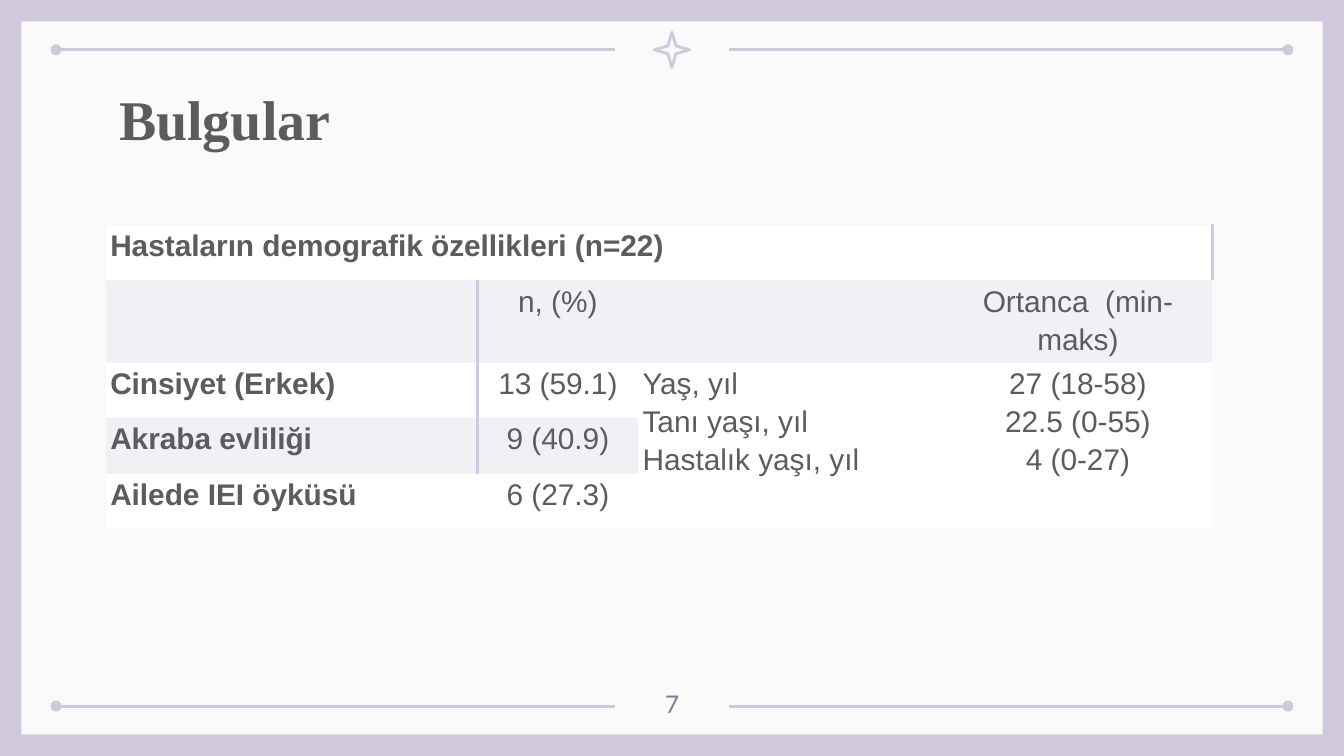
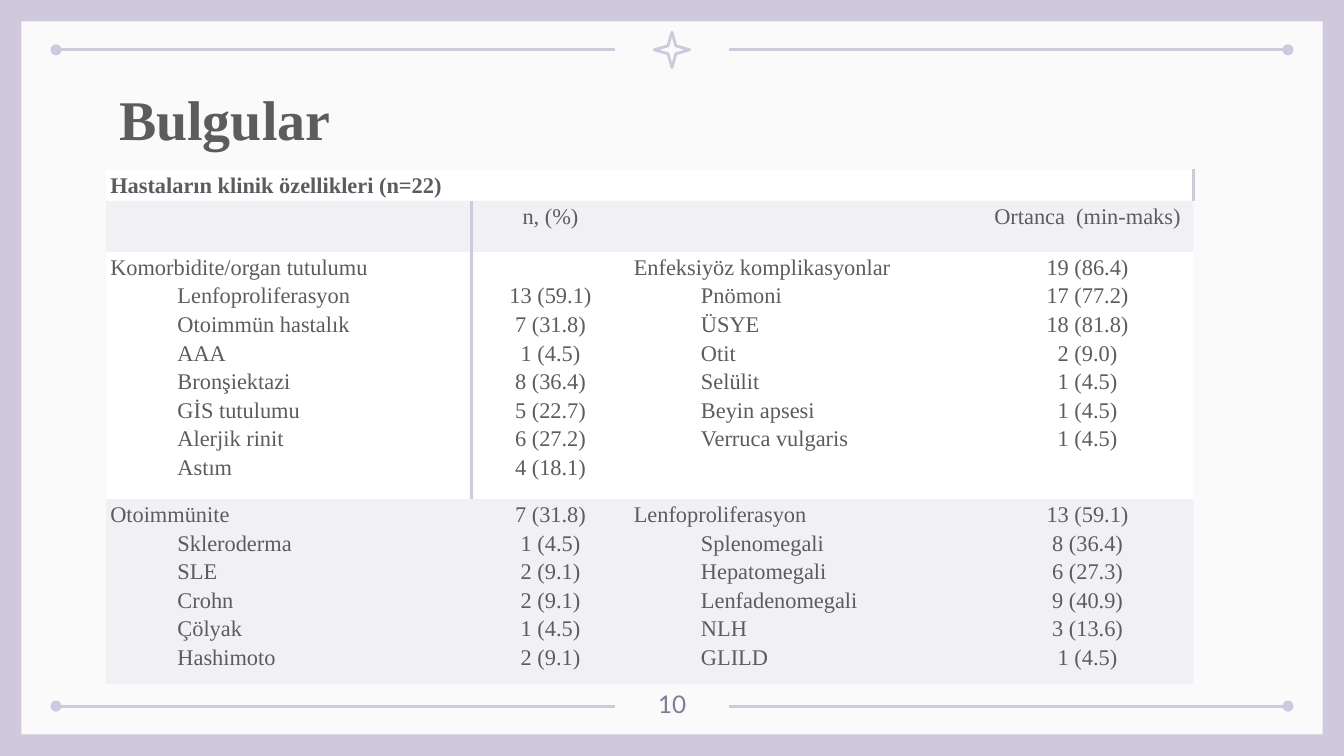
from dataclasses import dataclass

from lxml import etree
from pptx import Presentation
from pptx.dml.color import RGBColor
from pptx.enum import shapes, text
from pptx.oxml import ns
from pptx.util import Pt


@dataclass(frozen=True)
class Theme:
    """Colours, fonts and type sizes shared by the slides."""
    lilac: str = "D0C9DD"
    panel: str = "FAFAFA"
    edge: str = "F9F9F9"
    white: str = "FFFFFF"
    ink: str = "5C5C5F"
    number: str = "85789C"
    serif: str = "Times New Roman"
    sans: str = "Arial"
    number_font: str = "Lato"
    title_size: float = 30
    number_size: float = 13
    rule: float = 1.5
    divider: float = 2
    hairline: float = 0.75
    band_alpha: int = 20000


THEME = Theme()
WIDTH, HEIGHT = 720, 405
NO_GRID_STYLE = "{2D5ABB26-0587-4C30-8999-92F81FD0307C}"

DEMOGRAPHICS = [
    [["Hastaların demografik özellikleri (n=22)"]],
    [[], ["n, (%)"], [], ["Ortanca  (min-maks)"]],
    [["Cinsiyet (Erkek)"], ["13 (59.1)"],
     ["Yaş, yıl", "Tanı yaşı, yıl", "Hastalık yaşı, yıl"],
     ["27 (18-58)", "22.5 (0-55)", "4 (0-27)"]],
    [["Akraba evliliği"], ["9 (40.9)"]],
    [["Ailede IEI öyküsü"], ["6 (27.3)"]],
]

CLINICAL = [
    [["Hastaların klinik özellikleri (n=22)"]],
    [[], ["n, (%)"], [], ["Ortanca  (min-maks)"]],
    [["Komorbidite/organ tutulumu", "Lenfoproliferasyon", "Otoimmün hastalık", "AAA",
      "Bronşiektazi", "GİS tutulumu", "Alerjik rinit", "Astım"],
     ["13 (59.1)", "7 (31.8)", "1 (4.5)", "8 (36.4)", "5 (22.7)", "6 (27.2)", "4 (18.1)"],
     ["Enfeksiyöz komplikasyonlar", "Pnömoni", "ÜSYE", "Otit", "Selülit",
      "Beyin apsesi", "Verruca vulgaris"],
     ["19 (86.4)", "17 (77.2)", "18 (81.8)", "2 (9.0)", "1 (4.5)", "1 (4.5)", "1 (4.5)"]],
    [["Otoimmünite", "Skleroderma", "SLE", "Crohn", "Çölyak", "Hashimoto"],
     ["7 (31.8)", "1 (4.5)", "2 (9.1)", "2 (9.1)", "1 (4.5)", "2 (9.1)"],
     ["Lenfoproliferasyon", "Splenomegali", "Hepatomegali", "Lenfadenomegali", "NLH", "GLILD"],
     ["13 (59.1)", "8 (36.4)", "6 (27.3)", "9 (40.9)", "3 (13.6)", "1 (4.5)"]],
]


def points(*values):
    """Convert numbers to point lengths."""
    return [Pt(value) for value in values]


def color(value):
    """Turn a hex string into a colour."""
    return RGBColor.from_string(value)


def style_runs(paragraph, font, size, ink, bold=False):
    """Format every run of a paragraph."""
    for run in paragraph.runs:
        run.font.name = font
        run.font.size = Pt(size)
        run.font.bold = bold
        run.font.color.rgb = color(ink)


def add_label(slide, box, words, font, size, ink, bold=False, centred=False, top=7.2):
    """Add one line of text in a box."""
    frame = slide.shapes.add_textbox(*points(*box)).text_frame
    frame.word_wrap = True
    frame.margin_left = frame.margin_right = frame.margin_bottom = Pt(7.2)
    frame.margin_top = Pt(top)
    frame.text = words
    paragraph = frame.paragraphs[0]
    paragraph.alignment = text.PP_ALIGN.CENTER if centred else text.PP_ALIGN.LEFT
    style_runs(paragraph, font, size, ink, bold)


def add_rule(slide, start, end, y, dot):
    """Draw a horizontal rule with a dot at its outer end."""
    rule = slide.shapes.add_connector(
        shapes.MSO_CONNECTOR.STRAIGHT, *points(start, y, end, y))
    rule.line.color.rgb = color(THEME.lilac)
    rule.line.width = Pt(THEME.rule)
    etree.SubElement(rule.line._get_or_add_ln(), ns.qn(f"a:{dot}"), type="oval")
    etree.SubElement(rule._element.spPr, ns.qn("a:effectLst"))


def add_frame(slide, box):
    """Draw the panel, the rules and the star inside the given box."""
    left, top, width, height = box
    slide.background.fill.solid()
    slide.background.fill.fore_color.rgb = color(THEME.lilac)
    panel = slide.shapes.add_shape(shapes.MSO_SHAPE.RECTANGLE, *points(*box))
    panel.shadow.inherit = False
    panel.fill.solid()
    panel.fill.fore_color.rgb = color(THEME.panel)
    panel.line.fill.background()
    margin, gap, inset = 18.5, 30.5, 15.2
    middle = left + width / 2
    for y in (top + inset, top + height - inset):
        add_rule(slide, left + margin, middle - gap, y, "headEnd")
        add_rule(slide, middle + gap, left + width - margin, y, "tailEnd")
    size = 19
    star = slide.shapes.add_shape(
        shapes.MSO_SHAPE.STAR_4_POINT,
        *points(middle - size / 2, top + inset - size / 2, size, size))
    star.adjustments[0] = 0.157
    star.shadow.inherit = False
    star.fill.background()
    star.line.color.rgb = color(THEME.lilac)
    star.line.width = Pt(THEME.rule)


def set_borders(cell, borders):
    """Write cell borders given as side: (colour, width), ahead of the fill."""
    properties = cell._tc.get_or_add_tcPr()
    sides = [side for side in "LRTB" if side in borders]
    for position, side in enumerate(sides):
        ink, width = borders[side]
        line = etree.Element(ns.qn(f"a:ln{side}"), w=str(Pt(width)))
        fill = etree.SubElement(line, ns.qn("a:solidFill"))
        etree.SubElement(fill, ns.qn("a:srgbClr"), val=ink)
        properties.insert(position, line)


def cell_borders(row, column, last_row, last_column):
    """Choose the borders of a cell from its place in the table."""
    edge = (THEME.edge, THEME.hairline)
    divider = (THEME.lilac, THEME.divider)
    if row == 0:
        return {"L": edge, "T": edge, "R": divider}
    borders = {}
    if column == 0:
        borders["L"] = edge
        if row < last_row:
            borders["R"] = divider
    if column == last_column:
        borders["R"] = edge
    if row == last_row:
        borders["B"] = edge
    return borders


def fill_cell(cell, banded):
    """Fill a cell white or with the translucent band."""
    cell.fill.solid()
    cell.fill.fore_color.rgb = color(THEME.lilac if banded else THEME.white)
    if banded:
        tint = cell._tc.tcPr.find(".//" + ns.qn("a:srgbClr"))
        etree.SubElement(tint, ns.qn("a:alpha"), val=str(THEME.band_alpha))


def write_cell(cell, lines, font, size, bold, centred, indent):
    """Write the lines of a cell, indenting all but the first."""
    cell.text_frame.text = "\n".join(lines)
    for index, paragraph in enumerate(cell.text_frame.paragraphs):
        paragraph.alignment = text.PP_ALIGN.CENTER if centred else text.PP_ALIGN.JUSTIFY
        paragraph.line_spacing = 1.15
        if index and indent and not centred:
            paragraph._p.get_or_add_pPr().set("marL", str(Pt(indent)))
        style_runs(paragraph, font, size, THEME.ink, bold)


def add_findings(slide, origin, widths, heights, rows, font, size,
                 bold_labels=False, indent=0, merges=(), lowered=None):
    """Build a findings table with its top left corner at the origin."""
    frame = slide.shapes.add_table(
        len(heights), len(widths), *points(*origin, sum(widths), sum(heights)))
    table = frame.table
    table.first_row = table.horz_banding = False
    table._tbl.tblPr.find(ns.qn("a:tableStyleId")).text = NO_GRID_STYLE
    for column, width in zip(table.columns, widths):
        column.width = Pt(width)
    for row, height in zip(table.rows, heights):
        row.height = Pt(height)
    last_row, last_column = len(heights) - 1, len(widths) - 1
    for start, end in (((0, 0), (0, last_column)), *merges):
        table.cell(*start).merge(table.cell(*end))
    for r in range(len(heights)):
        for c in range(len(widths)):
            cell = table.cell(r, c)
            cell.margin_left = cell.margin_right = Pt(2.4)
            cell.margin_top = Pt(size * 1.275 if (r, c) == lowered else 0)
            cell.margin_bottom = Pt(0)
            if cell.is_spanned:
                continue
            fill_cell(cell, r % 2 == 1)
            set_borders(cell, cell_borders(r, c, last_row, last_column))
            bold = r == 0 or (bold_labels and c == 0)
            write_cell(cell, rows[r][c], font, size, bold, c % 2 == 1, indent)


def add_findings_slide(presentation, number, **findings):
    """Add a slide with the frame, title, page number and table."""
    slide = presentation.slides.add_slide(presentation.slide_layouts[6])
    add_frame(slide, (11.5, 11.5, WIDTH - 23, HEIGHT - 23))
    add_label(slide, (338.5, 362, 43, 26), number, THEME.number_font,
              THEME.number_size, THEME.number, centred=True)
    add_label(slide, (56.7, 35.3, 607, 45.4), "Bulgular", THEME.serif,
              THEME.title_size, THEME.ink, bold=True, top=10)
    add_findings(slide, **findings)


def main():
    """Build and save the presentation."""
    presentation = Presentation()
    presentation.slide_width, presentation.slide_height = points(WIDTH, HEIGHT)
    add_findings_slide(
        presentation, "7", origin=(56.7, 120.5), widths=(199.2, 86, 163.6, 144),
        heights=[29.7] * 5, rows=DEMOGRAPHICS, font=THEME.sans, size=16,
        bold_labels=True, merges=[((2, c), (4, c)) for c in (2, 3)])
    add_findings_slide(
        presentation, "10", origin=(56.7, 91), widths=(196, 84.5, 188.6, 113.8),
        heights=(14.4, 27.3, 127.2, 85), rows=CLINICAL, font=THEME.serif, size=12,
        indent=36, lowered=(2, 1))
    presentation.save("out.pptx")


if __name__ == "__main__":
    main()
